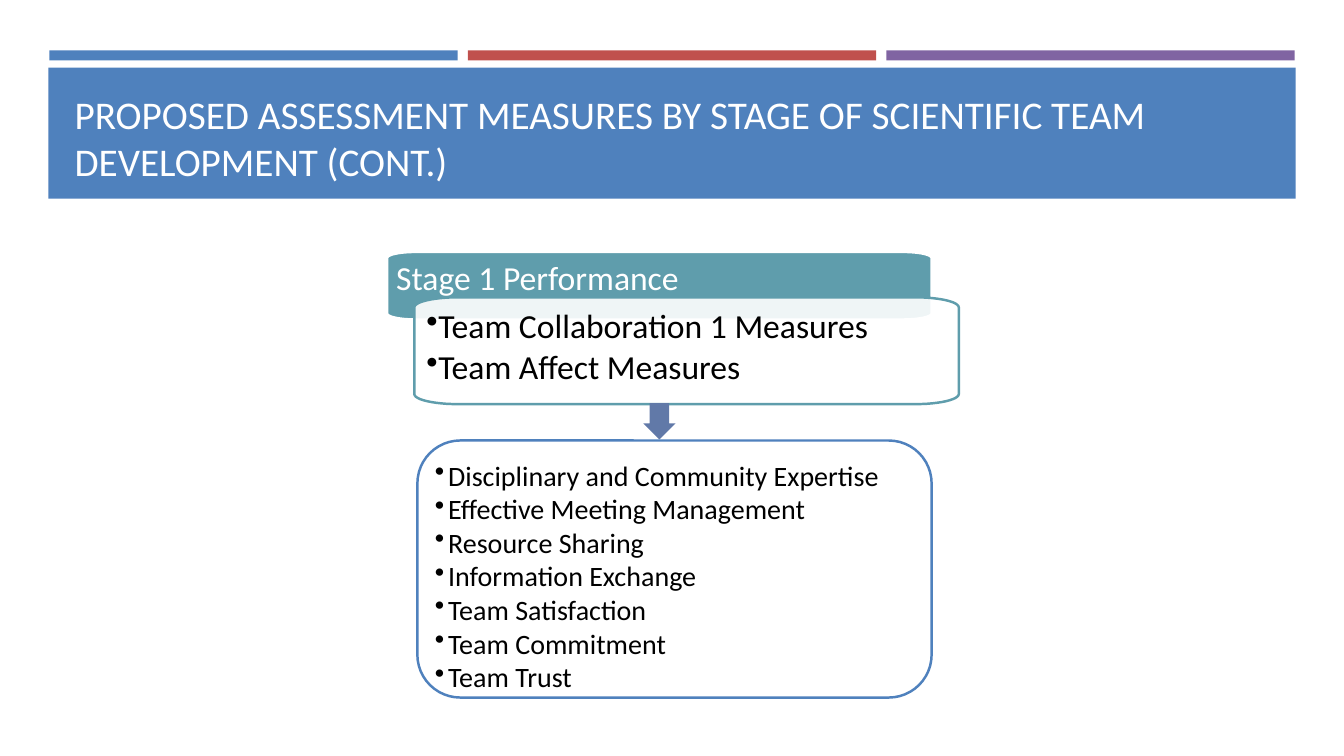
from math import cos, pi, sin

from lxml import etree
from pptx import Presentation
from pptx.dml.color import RGBColor
from pptx.enum.shapes import MSO_SHAPE
from pptx.enum.text import MSO_ANCHOR, MSO_AUTO_SIZE, PP_ALIGN
from pptx.oxml.ns import qn
from pptx.util import Inches, Pt

RECTANGLE = MSO_SHAPE.RECTANGLE
ROUNDED = MSO_SHAPE.ROUNDED_RECTANGLE
ARROW = MSO_SHAPE.RIGHT_ARROW
TOP, BOTTOM = MSO_ANCHOR.TOP, MSO_ANCHOR.BOTTOM
LEFT = PP_ALIGN.LEFT
NO_AUTOFIT = MSO_AUTO_SIZE.NONE

FONT = "Calibri"
CELL = 0.1  # grid cell in inches
BLUE, RED, PURPLE, TEAL, SLATE = "4F81BD", "C0504D", "8064A2", "5F9DAC", "6179A8"
WHITE, BLACK = "FFFFFF", "000000"

TITLE = "PROPOSED ASSESSMENT MEASURES BY STAGE OF SCIENTIFIC TEAM DEVELOPMENT (CONT.)"
STAGE = "Stage 1 Performance"
MEASURES = ["Team Collaboration 1 Measures", "Team Affect Measures"]
DETAILS = [
    "Disciplinary and Community Expertise",
    "Effective Meeting Management",
    "Resource Sharing",
    "Information Exchange",
    "Team Satisfaction",
    "Team Commitment",
    "Team Trust",
]


def grid(*cells):
    return [Inches(cell * CELL) for cell in cells]


def color(hex_string):
    return RGBColor.from_string(hex_string)


def style(shape, fill, line=None):
    shape.shadow.inherit = False
    shape.fill.solid()
    shape.fill.fore_color.rgb = color(fill)
    if line:
        shape.line.color.rgb = color(line)
        shape.line.width = Pt(1.75)
    else:
        shape.line.fill.background()
    return shape


def add_preset(slide, kind, box, fill, line=None):
    return style(slide.shapes.add_shape(kind, *grid(*box)), fill, line)


def add_soft_box(slide, box, radius_x, radius_y, fill, line):
    """Add a box whose corners are quarter ellipses."""
    left, top, width, height = box
    right, bottom = left + width, top + height
    centers = [
        (right - radius_x, bottom - radius_y),
        (left + radius_x, bottom - radius_y),
        (left + radius_x, top + radius_y),
        (right - radius_x, top + radius_y),
    ]
    steps = 12
    points = []
    for quarter, (center_x, center_y) in enumerate(centers):
        for step in range(steps + 1):
            angle = (quarter + step / steps) * pi / 2
            points.append(grid(center_x + radius_x * cos(angle),
                               center_y + radius_y * sin(angle)))
    builder = slide.shapes.build_freeform(*points[0])
    builder.add_line_segments(points[1:], close=True)
    return style(builder.convert_to_shape(), fill, line)


def set_opacity(shape, percent):
    fill_color = shape._element.spPr.find(qn("a:solidFill"))[0]
    etree.SubElement(fill_color, qn("a:alpha")).set("val", str(percent * 1000))


def add_bullet(paragraph, indent):
    properties = paragraph._p.get_or_add_pPr()
    properties.set("marL", str(Inches(indent)))
    properties.set("indent", str(-Inches(indent)))
    etree.SubElement(properties, qn("a:buChar")).set("char", "•")


def write(shape, lines, size, text_color, margins, anchor=TOP,
          spacing=1.0, after=0, indent=None):
    """Fill a shape with left-aligned lines; an indent makes them bullets."""
    frame = shape.text_frame
    frame.text = "\n".join(lines)
    frame.word_wrap = True
    frame.auto_size = NO_AUTOFIT
    frame.vertical_anchor = anchor
    (frame.margin_left, frame.margin_top,
     frame.margin_right, frame.margin_bottom) = map(Inches, margins)
    for paragraph in frame.paragraphs:
        paragraph.alignment = LEFT
        paragraph.line_spacing = spacing
        paragraph.space_before = Pt(0)
        paragraph.space_after = Pt(after)
        if indent:
            add_bullet(paragraph, indent)
        for run in paragraph.runs:
            run.font.name = FONT
            run.font.size = Pt(size)
            run.font.color.rgb = color(text_color)


def add_header(slide):
    bar_width, gap = 40.5, 1
    for index, fill in enumerate([BLUE, RED, PURPLE]):
        left = 4.9 + index * (bar_width + gap)
        add_preset(slide, RECTANGLE, (left, 5, bar_width, 1), fill)
    band = add_preset(slide, RECTANGLE, (4.8, 6.7, 123.7, 13), BLUE)

    title = slide.shapes.title
    title.left, title.top, title.width, title.height = grid(6.4, 7.7, 120.6, 11.1)
    write(title, [TITLE], 28, WHITE, (0.1, 0.05, 0.1, 0.05), BOTTOM)
    band._element.addnext(title._element)


def add_stage(slide):
    heading = add_soft_box(slide, (38.4, 25, 54, 6.7), 2.8, 0.6, TEAL, WHITE)
    write(heading, [STAGE], 24, WHITE, (0.09, 0.09, 0.09, 0.27), spacing=0.9)

    measures = add_soft_box(slide, (41.1, 29.5, 54, 10.6), 4.3, 1, WHITE, TEAL)
    set_opacity(measures, 90)
    write(measures, MEASURES, 24, BLACK, [0.12] * 4,
          spacing=0.9, after=3.6, indent=0.12 / 2)


def add_details(slide):
    details = add_preset(slide, ROUNDED, (41.4, 43.7, 51, 25.5), WHITE, BLUE)
    write(details, DETAILS, 20, BLACK, [0.05] * 4, indent=0.13)

    arrow = add_preset(slide, ARROW, (63.6, 40.2, 3.6, 3.2), SLATE)
    arrow.rotation = 90
    arrow.adjustments[0] = 0.6
    arrow.adjustments[1] = 0.5


def main():
    presentation = Presentation()
    presentation.slide_width, presentation.slide_height = grid(133.3, 75)
    slide = presentation.slides.add_slide(presentation.slide_layouts[5])
    add_header(slide)
    add_stage(slide)
    add_details(slide)
    presentation.save("out.pptx")


if __name__ == "__main__":
    main()
